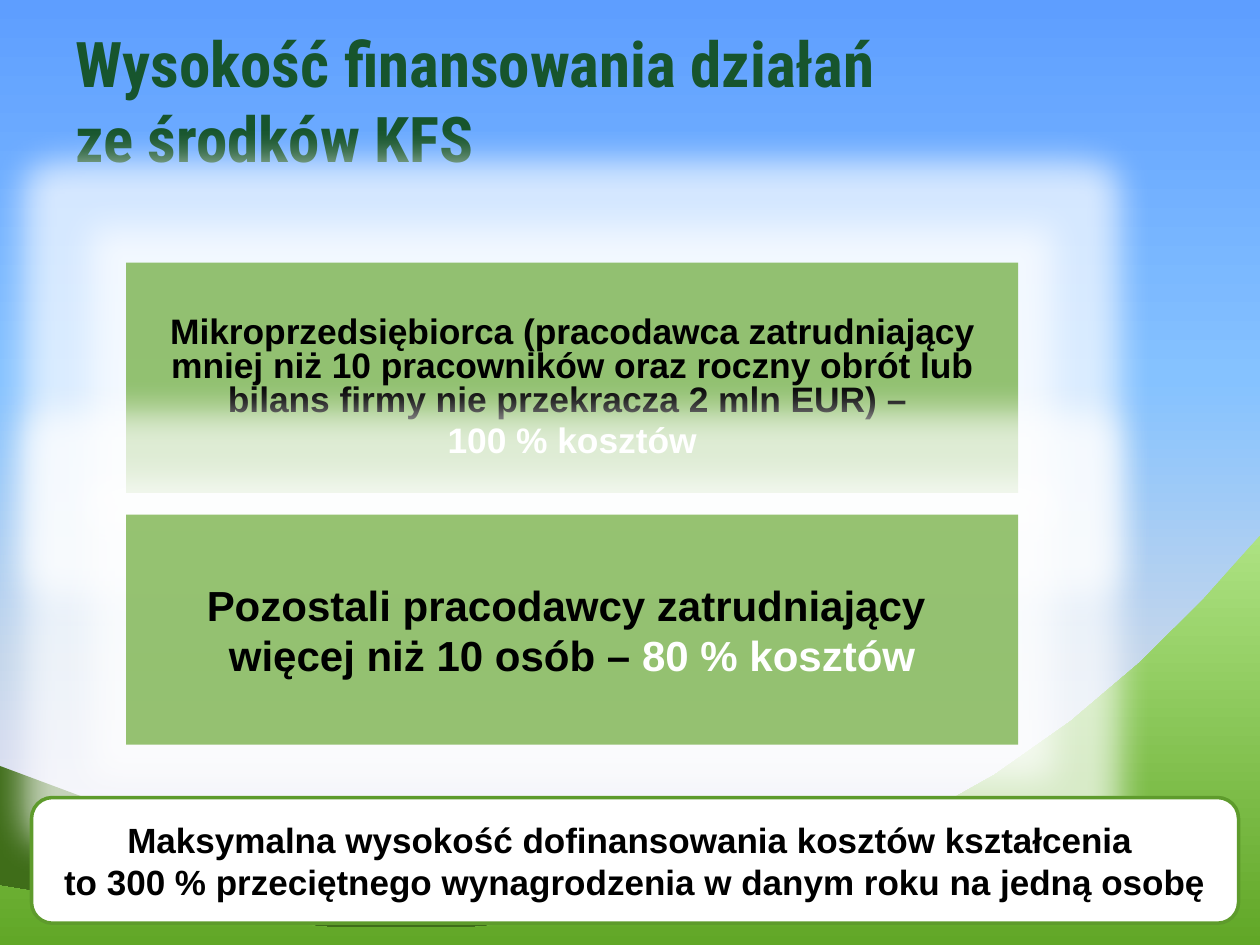
from lxml.etree import SubElement
from pptx import Presentation
from pptx.dml.color import RGBColor
from pptx.enum.shapes import MSO_SHAPE
from pptx.enum.text import MSO_ANCHOR, PP_ALIGN
from pptx.oxml import parse_xml
from pptx.oxml.ns import nsdecls, qn
from pptx.util import Emu, Inches, Pt

WIDE, HIGH = Inches(10), Inches(7.5)
UNIT = 1000  # freeform units per inch
STEPS = 12  # line pieces per curve


def tint(code):
    return RGBColor.from_string(code)


def area(left, top, width, height):
    """Box from shares of the slide's size."""
    return (Emu(int(WIDE * left)), Emu(int(HIGH * top)),
            Emu(int(WIDE * width)), Emu(int(HIGH * height)))


def blend(fill, stops):
    """Vertical gradient with any number of (percent, colour) stops."""
    fill.gradient()
    grad = fill._xPr.find(qn("a:gradFill"))
    for part in list(grad):
        grad.remove(part)
    row = SubElement(grad, qn("a:gsLst"))
    for pos, code in stops:
        stop = SubElement(row, qn("a:gs"), pos=str(pos * 1000))
        SubElement(stop, qn("a:srgbClr"), val=code)
    SubElement(grad, qn("a:lin"), ang="5400000", scaled="0")


def curve(a, b, c, d):
    """Points along a cubic curve."""
    for step in range(STEPS + 1):
        t = step / STEPS
        u = 1 - t
        yield tuple(u**3 * p + 3 * u * u * t * q + 3 * u * t * t * r + t**3 * s
                    for p, q, r, s in zip(a, b, c, d))


def hill(slide, points):
    points = [(x * UNIT, y * UNIT) for x, y in points]
    pen = slide.shapes.build_freeform(*points[0], scale=Inches(1) / UNIT)
    pen.add_line_segments(points[1:], close=True)
    shape = pen.convert_to_shape()
    shape.shadow.inherit = False
    shape.line.fill.background()
    return shape


def scene(slide):
    # Sky
    blend(slide.background.fill, [(0, "5E9EFF"), (40, "85C2FF"),
                                  (70, "C4D6EB"), (100, "FFEBFA")])
    # Dark hill behind
    back = hill(slide, [
        (9.71, 5.26), (9.81, 7.5), (0, 7.5),
        *curve((0, 6.08), (4.88, 8.1), (7.59, 6.84), (9.71, 5.26))])
    back.fill.solid()
    back.fill.fore_color.rgb = tint("3F6D19")
    # Light hill in front
    front = hill(slide, [
        (10, 7.5), (0, 7.5),
        *curve((0, 7.03), (5.71, 8.15), (8.24, 6.34), (10, 4.25))])
    blend(front.fill, [(0, "ADE282"), (100, "61A727")])


def write(shape, paras, size, font="Arial", align=PP_ALIGN.CENTER):
    """Each paragraph is a list of (text, colour) parts."""
    frame = shape.text_frame
    frame.word_wrap = True
    frame.text = "\n".join(parts[0][0] for parts in paras)
    for para, parts in zip(frame.paragraphs, paras):
        for text, _ in parts[1:]:
            para.add_run().text = text
        para.alignment = align
        for run in para.runs:
            run.font.size, run.font.name, run.font.bold = Pt(size), font, True
            run.font.color.rgb = tint(parts[0][1])
        para.runs[-1].font.color.rgb = tint(parts[-1][1])
    return frame


def title(slide, box):
    shape = slide.shapes.add_textbox(*box)
    frame = write(shape, [[("Wysokość finansowania działań \vze środków KFS",
                            "17552D")]], 36, "Roboto Condensed", PP_ALIGN.LEFT)
    frame.vertical_anchor = MSO_ANCHOR.BOTTOM


def card(slide, box, paras, size):
    """Translucent green panel with a wide white glow."""
    shape = slide.shapes.add_shape(MSO_SHAPE.RECTANGLE, *box)
    shape.shadow.inherit = False
    shape.line.fill.background()
    shape.fill.solid()
    shape.fill.fore_color.rgb = tint("5FA326")
    props = shape._element.spPr
    SubElement(props.find(qn("a:solidFill"))[0], qn("a:alpha"), val="65000")
    props.find(qn("a:effectLst")).append(parse_xml(
        f'<a:glow {nsdecls("a")} rad="{Inches(0.55)}"><a:srgbClr val="FFFFFF">'
        '<a:alpha val="70000"/></a:srgbClr></a:glow>'))
    frame = write(shape, paras, size)
    frame.vertical_anchor = MSO_ANCHOR.MIDDLE
    return frame


def cards(slide, box):
    left, top, width, height = box
    gap = int(height * 0.045)
    tall = (height - gap) // 2
    first = card(slide, (left, top, width, tall), [
        [("Mikroprzedsiębiorca (pracodawca zatrudniający mniej niż 10 "
          "pracowników oraz roczny obrót lub bilans firmy nie przekracza "
          "2 mln EUR) – ", "000000")],
        [("100 % kosztów", "FFFFFF")]], 20.2)
    first.margin_top = Inches(0.23)
    for para in first.paragraphs:
        para.line_spacing, para.space_before = 0.8, Pt(4)
    card(slide, (left, top + tall + gap, width, tall), [
        [("Pozostali pracodawcy zatrudniający \vwięcej niż 10 osób – ",
          "000000"), ("80 % kosztów", "FFFFFF")]], 24)


def note(slide, box):
    shape = slide.shapes.add_shape(MSO_SHAPE.ROUNDED_RECTANGLE, *box)
    shape.shadow.inherit = False
    shape.fill.solid()
    shape.fill.fore_color.rgb = tint("FFFFFF")
    shape.line.color.rgb = tint("5E9B2C")
    shape.line.width = Pt(2)
    frame = write(shape, [[(
        "Maksymalna wysokość dofinansowania kosztów kształcenia \v"
        "to 300 % przeciętnego wynagrodzenia w danym roku na jedną osobę",
        "000000")]], 20)
    frame.vertical_anchor = MSO_ANCHOR.MIDDLE


def main():
    deck = Presentation()
    deck.slide_width, deck.slide_height = WIDE, HIGH
    slide = deck.slides.add_slide(deck.slide_layouts[6])
    scene(slide)
    title(slide, area(0.05, 0.055, 0.89, 0.137))
    cards(slide, area(0.1, 0.278, 0.708, 0.51))
    note(slide, area(0.025, 0.844, 0.958, 0.133))
    deck.save("out.pptx")


if __name__ == "__main__":
    main()
